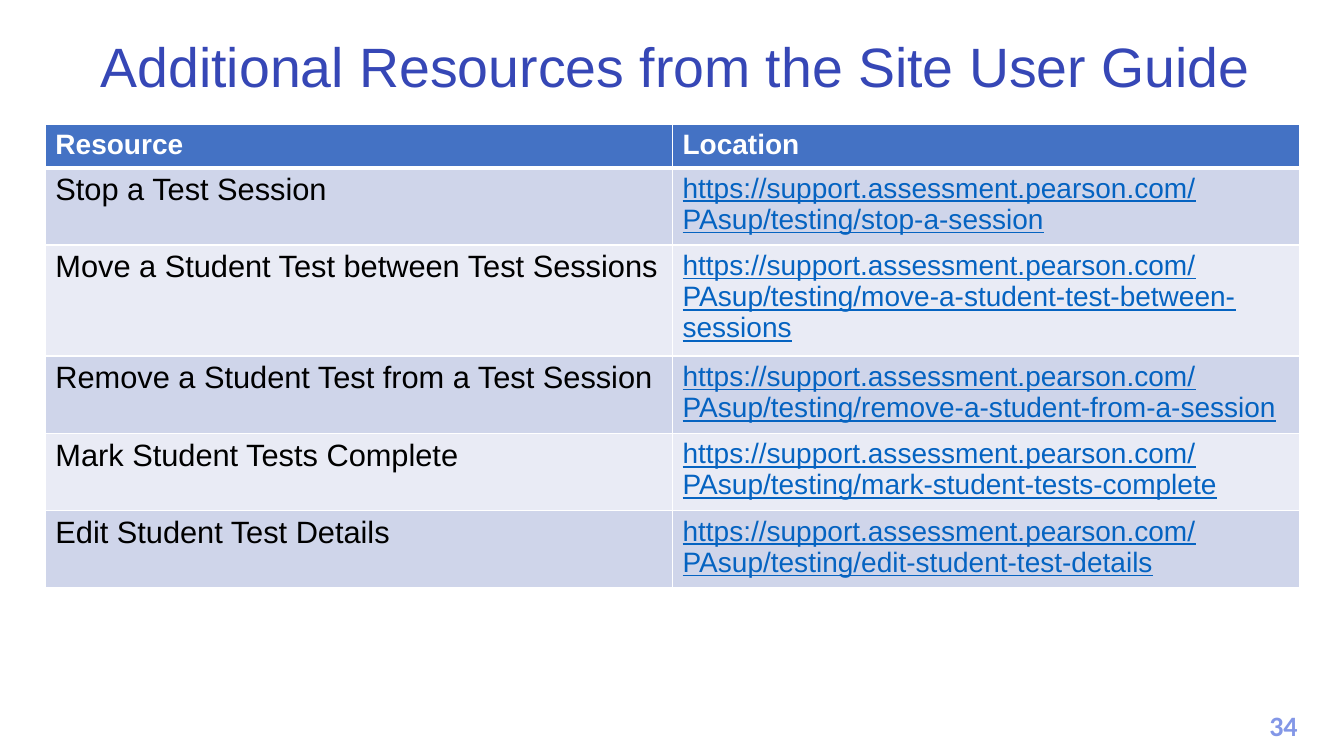
from typing import NamedTuple

from lxml import etree
from pptx import Presentation
from pptx.dml.color import RGBColor
from pptx.enum.text import MSO_ANCHOR, PP_ALIGN
from pptx.oxml.ns import qn
from pptx.util import Inches, Pt

LEFT, CENTER = PP_ALIGN.LEFT, PP_ALIGN.CENTER
TOP, MIDDLE = MSO_ANCHOR.TOP, MSO_ANCHOR.MIDDLE

WHITE = RGBColor(0xFF, 0xFF, 0xFF)
BLACK = RGBColor(0x00, 0x00, 0x00)
TITLE_BLUE = RGBColor(0x36, 0x47, 0xB6)
NUMBER_BLUE = RGBColor(0x83, 0x97, 0xE7)
HEADER_BLUE = RGBColor(0x44, 0x72, 0xC4)
LINK_BLUE = RGBColor(0x05, 0x63, 0xC1)
BANDS = (RGBColor(0xCF, 0xD5, 0xEA), RGBColor(0xE9, 0xEB, 0xF5))

BASE_ADDRESS = "https://support.assessment.pearson.com/PAsup/testing/"
HEADERS = ("Resource", "Location")
COLUMN_WIDTH = 6.22
ROW_HEIGHT = 0.41


class Resource(NamedTuple):
    name: str
    page: str


RESOURCES = (
    Resource("Stop a Test Session", "stop-a-session"),
    Resource("Move a Student Test between Test Sessions",
             "move-a-student-test-between-sessions"),
    Resource("Remove a Student Test from a Test Session",
             "remove-a-student-from-a-session"),
    Resource("Mark Student Tests Complete", "mark-student-tests-complete"),
    Resource("Edit Student Test Details", "edit-student-test-details"),
)


def write_text(text_frame, text: str, *, size: float, color: RGBColor,
               font: str = "Arial", bold: bool = False, underline: bool = False,
               align=LEFT, line_spacing: float = 1.0) -> None:
    paragraph = text_frame.paragraphs[0]
    paragraph.alignment = align
    paragraph.line_spacing = line_spacing
    run = paragraph.add_run()
    run.text = text
    run.font.name = font
    run.font.size = Pt(size)
    run.font.bold = bold
    run.font.underline = underline
    run.font.color.rgb = color


def add_text_box(slide, left: float, top: float, width: float, height: float,
                 text: str, *, anchor=TOP, **text_format) -> None:
    box = slide.shapes.add_textbox(
        Inches(left), Inches(top), Inches(width), Inches(height))
    box.text_frame.word_wrap = True
    box.text_frame.vertical_anchor = anchor
    write_text(box.text_frame, text, **text_format)


def set_borders(cell, top: float, bottom: float) -> None:
    properties = cell._tc.get_or_add_tcPr()
    for side, points in (("L", 1), ("R", 1), ("T", top), ("B", bottom)):
        line = etree.SubElement(properties, qn(f"a:ln{side}"), w=str(Pt(points)))
        fill = etree.SubElement(line, qn("a:solidFill"))
        etree.SubElement(fill, qn("a:srgbClr"), val=str(WHITE))


def format_cell(cell, text: str, fill: RGBColor, *, top: float = 1,
                bottom: float = 1, **text_format) -> None:
    set_borders(cell, top, bottom)
    cell.fill.solid()
    cell.fill.fore_color.rgb = fill
    write_text(cell.text_frame, text, **text_format)


def add_resource_table(slide) -> None:
    row_count = len(RESOURCES) + 1
    table = slide.shapes.add_table(
        row_count, len(HEADERS), Inches(0.45), Inches(1.23),
        Inches(COLUMN_WIDTH * len(HEADERS)), Inches(ROW_HEIGHT * row_count)).table

    # Header row with a heavier rule below it
    for column, header in enumerate(HEADERS):
        format_cell(table.cell(0, column), header, HEADER_BLUE, bottom=3,
                    size=20, color=WHITE, bold=True)

    # Banded rows, one per resource
    for row, resource in enumerate(RESOURCES, start=1):
        fill = BANDS[(row - 1) % len(BANDS)]
        top = 3 if row == 1 else 1
        format_cell(table.cell(row, 0), resource.name, fill, top=top,
                    size=22, color=BLACK)
        format_cell(table.cell(row, 1), BASE_ADDRESS + resource.page, fill, top=top,
                    size=20, color=LINK_BLUE, underline=True)


def main() -> None:
    presentation = Presentation()
    presentation.slide_width = Inches(13.33)
    presentation.slide_height = Inches(7.5)
    slide = presentation.slides.add_slide(presentation.slide_layouts[6])

    # Slide number
    add_text_box(slide, 12.42, 6.98, 0.62, 0.44, "34", size=20,
                 color=NUMBER_BLUE, font="Calibri", bold=True, align=CENTER)

    # Title
    add_text_box(slide, 0.9, 0.32, 12.43, 0.74,
                 "Additional Resources from the Site User Guide", anchor=MIDDLE,
                 size=39.6, color=TITLE_BLUE, line_spacing=0.9)

    # Table of resources
    add_resource_table(slide)
    presentation.save("out.pptx")


if __name__ == "__main__":
    main()
